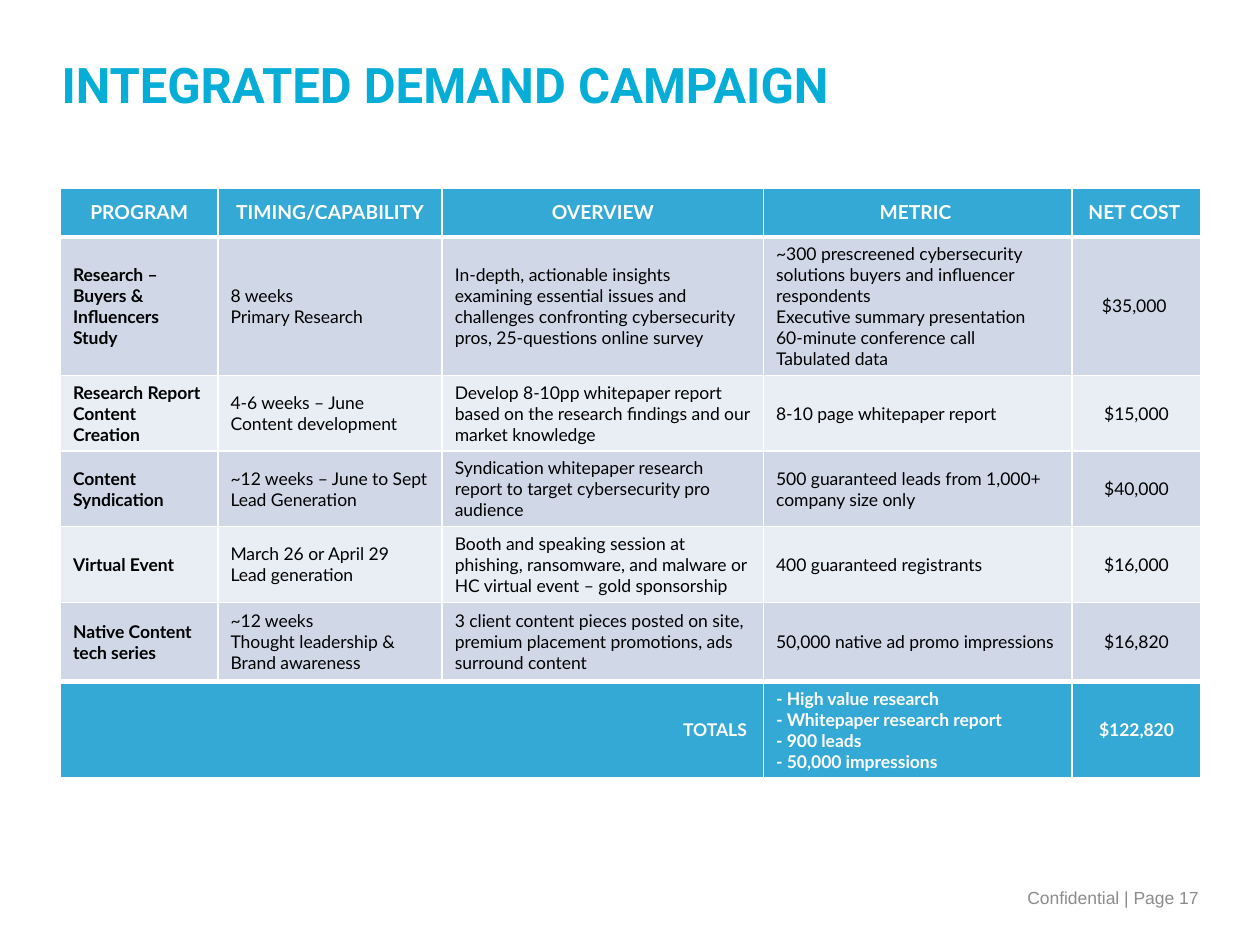
import pptx
import pptx.dml.color
import pptx.enum.text
import pptx.oxml.ns
import pptx.util
from lxml import etree
from pptx.util import Inches

COLORS = {
    "white": "FFFFFF",
    "black": "000000",
    "accent": "34A9D5",
    "band_dark": "D0D8E8",
    "band_light": "E9EDF4",
    "title": "06ADD6",
    "footer": "8C8C8C",
}
ALIGN = pptx.enum.text.PP_ALIGN
MIDDLE = pptx.enum.text.MSO_ANCHOR.MIDDLE


def write(frame, lines, font, size, color, bold=False, align=ALIGN.LEFT):
    frame.word_wrap = True
    frame.vertical_anchor = MIDDLE
    for index, line in enumerate(lines):
        paragraph = frame.paragraphs[0] if index == 0 else frame.add_paragraph()
        paragraph.alignment = align
        run = paragraph.add_run()
        run.text = line
        run.font.name = font
        run.font.size = pptx.util.Pt(size)
        run.font.bold = bold
        run.font.color.rgb = pptx.dml.color.RGBColor.from_string(COLORS[color])


def add_borders(cell, top, bottom):
    properties = cell._tc.get_or_add_tcPr()
    for side, points in (("L", 1), ("R", 1), ("T", top), ("B", bottom)):
        line = etree.SubElement(properties, pptx.oxml.ns.qn(f"a:ln{side}"),
                                w=str(pptx.util.Pt(points)))
        fill = etree.SubElement(line, pptx.oxml.ns.qn("a:solidFill"))
        etree.SubElement(fill, pptx.oxml.ns.qn("a:srgbClr"), val=COLORS["white"])


presentation = pptx.Presentation()
presentation.slide_width = Inches(10)
presentation.slide_height = Inches(7.5)
slide = presentation.slides.add_slide(presentation.slide_layouts[6])

# Campaign table: each cell is a list of lines
programs = [
    [["PROGRAM"], ["TIMING/CAPABILITY"], ["OVERVIEW"], ["METRIC "], ["NET COST "]],
    [["Research – Buyers & Influencers Study"],
     ["8 weeks", "Primary Research"],
     ["In-depth, actionable insights examining essential issues and challenges "
      "confronting cybersecurity pros, 25-questions online survey"],
     ["~300 prescreened cybersecurity solutions buyers and influencer respondents",
      "Executive summary presentation", "60-minute conference call", "Tabulated data"],
     ["$35,000 "]],
    [["Research Report Content Creation"],
     ["4-6 weeks – June", "Content development"],
     ["Develop 8-10pp whitepaper report based on the research findings and "
      "our market knowledge"],
     ["8-10 page whitepaper report"],
     ["$15,000"]],
    [["Content Syndication"],
     ["~12 weeks – June to Sept", "Lead Generation"],
     ["Syndication whitepaper research report to target cybersecurity pro audience"],
     ["500 guaranteed leads from 1,000+ company size only"],
     ["$40,000"]],
    [["Virtual Event"],
     ["March 26 or April 29", "Lead generation"],
     ["Booth and speaking session at phishing, ransomware, and malware or "
      "HC virtual event – gold sponsorship"],
     ["400 guaranteed registrants"],
     ["$16,000"]],
    [["Native Content tech series"],
     ["~12 weeks", "Thought leadership & Brand awareness"],
     ["3 client content pieces posted on site, premium placement promotions, "
      "ads surround content"],
     ["50,000 native ad promo impressions"],
     ["$16,820"]],
    [["TOTALS "], [], [],
     ["- High value research", "- Whitepaper research report",
      "- 900 leads", "- 50,000 impressions"],
     ["$122,820"]],
]
column_widths = [1.25, 1.78, 2.55, 2.45, 1.02]
row_heights = [0.39, 1.1, 0.6, 0.6, 0.6, 0.63, 0.76]
last_row = len(programs) - 1
last_column = len(column_widths) - 1

campaign = slide.shapes.add_table(
    len(row_heights), len(column_widths), Inches(0.48), Inches(1.49),
    Inches(sum(column_widths)), Inches(sum(row_heights))).table
for column, width in zip(campaign.columns, column_widths):
    column.width = Inches(width)
for row, height in zip(campaign.rows, row_heights):
    row.height = Inches(height)
campaign.cell(last_row, 0).merge(campaign.cell(last_row, 2))

for r, program in enumerate(programs):
    header, totals = r == 0, r == last_row
    accented = header or totals
    band = "accent" if accented else "band_dark" if r % 2 else "band_light"
    for c, lines in enumerate(program):
        cell = campaign.cell(r, c)
        # Thick rules set off the header and the totals
        add_borders(cell, top=3 if r in (1, last_row) else 1,
                    bottom=3 if r in (0, last_row - 1) else 1)
        cell.fill.solid()
        cell.fill.fore_color.rgb = pptx.dml.color.RGBColor.from_string(COLORS[band])
        cell.vertical_anchor = MIDDLE
        if header or c == last_column:
            align = ALIGN.CENTER
        else:
            align = ALIGN.RIGHT if totals and c == 0 else ALIGN.LEFT
        write(cell.text_frame, lines, "Lato", 11 if header else 10,
              "white" if accented else "black", accented or c == 0, align)

# Footer
footer = slide.shapes.add_textbox(Inches(4.8), Inches(6.92), Inches(4.81), Inches(0.4))
write(footer.text_frame, ["Confidential | Page 17"], "Arial", 10, "footer",
      align=ALIGN.RIGHT)

# Title
title = slide.shapes.add_textbox(Inches(0.39), Inches(0.31), Inches(7.63), Inches(0.77))
write(title.text_frame, ["INTEGRATED DEMAND CAMPAIGN"], "Roboto", 28, "title", True)
title.text_frame.paragraphs[0].line_spacing = 0.9

presentation.save("out.pptx")
